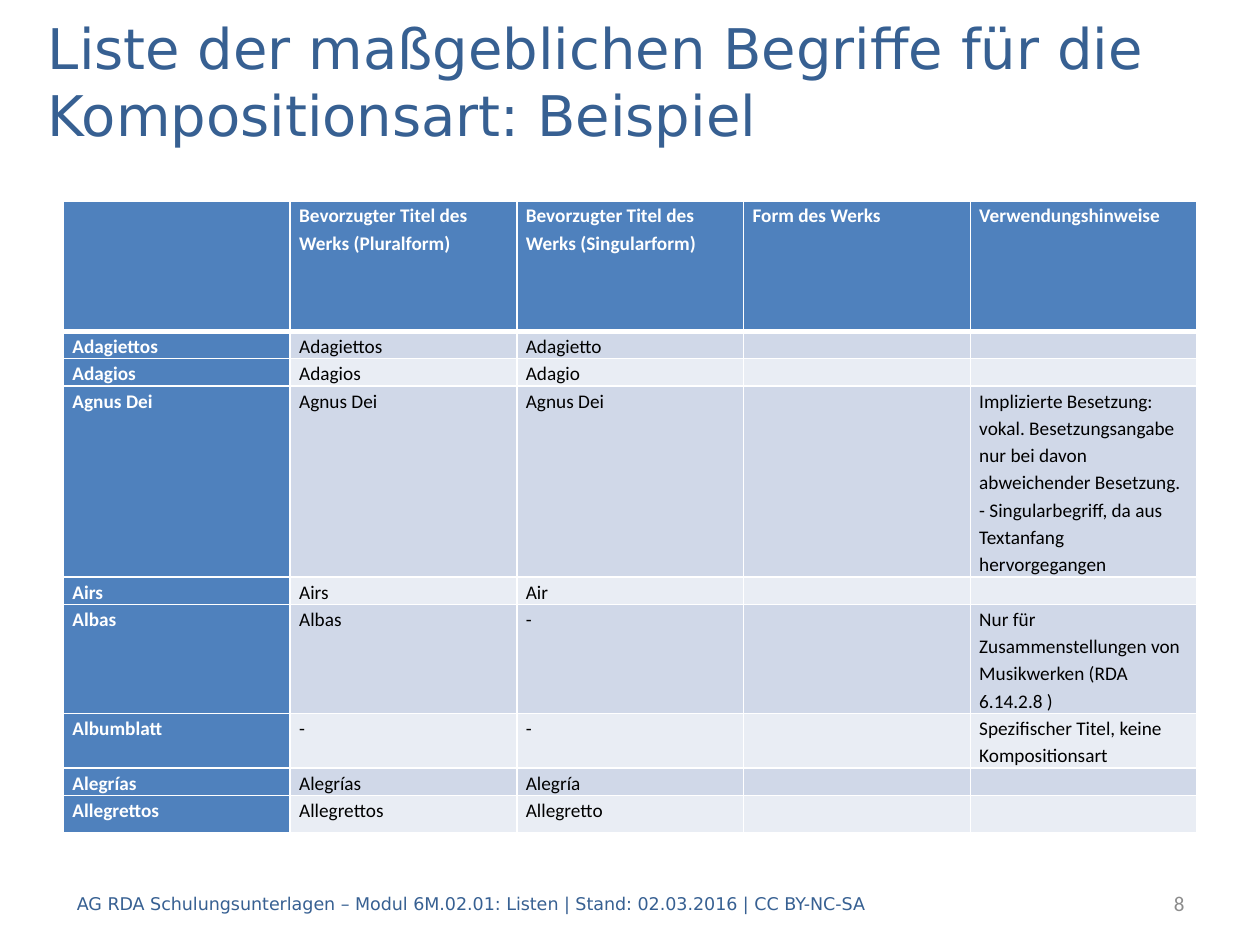
from typing import NamedTuple

from lxml import etree
from pptx import Presentation
from pptx.dml.color import RGBColor
from pptx.enum import text
from pptx.oxml.ns import qn
from pptx.util import Cm, Pt

COLORS = {
    "heading": "376092",
    "number": "8C8C8C",
    "accent": "4F81BD",
    "band_dark": "D0D8E8",
    "band_light": "E9EDF4",
    "white": "FFFFFF",
    "black": "000000",
}
COLUMN_WIDTH = 4.57
CELL_SIZE = 11
HEADERS = (
    "",
    "Bevorzugter Titel des Werks (Pluralform)",
    "Bevorzugter Titel des Werks (Singularform)",
    "Form des Werks",
    "Verwendungshinweise",
)


class Style(NamedTuple):
    size: float
    font: str
    color: str
    bold: bool = False


class Area(NamedTuple):
    """Position and size in centimetres."""
    left: float
    top: float
    width: float
    height: float


class Label(NamedTuple):
    content: str
    area: Area
    style: Style
    align: text.PP_ALIGN = text.PP_ALIGN.LEFT


class Term(NamedTuple):
    name: str
    plural: str
    singular: str
    note: str = ""
    height: float = 0.55


TITLE = Label(
    "Liste der maßgeblichen Begriffe für die Kompositionsart: Beispiel",
    Area(0.71, 0.91, 24, 1.42),
    Style(32, "DejaVu Sans", "heading"),
)
FOOTERS = (
    Label("8", Area(20.09, 17.7, 4.04, 1.02), Style(12, "Calibri", "number"),
          text.PP_ALIGN.RIGHT),
    Label("AG RDA Schulungsunterlagen – Modul 6M.02.01: Listen | "
          "Stand: 02.03.2016 | CC BY-NC-SA",
          Area(1.3, 17.7, 20.6, 1.02), Style(10, "DejaVu Sans", "heading")),
)
TERMS = (
    Term("Adagiettos", "Adagiettos", "Adagietto"),
    Term("Adagios", "Adagios", "Adagio"),
    Term("Agnus Dei", "Agnus Dei", "Agnus Dei",
         "Implizierte Besetzung: vokal. Besetzungsangabe nur bei davon "
         "abweichender Besetzung. - Singularbegriff, da aus Textanfang "
         "hervorgegangen", 3.84),
    Term("Airs", "Airs", "Air"),
    Term("Albas", "Albas", "-",
         "Nur für Zusammenstellungen von Musikwerken (RDA 6.14.2.8 )", 2.19),
    Term("Albumblatt", "-", "-",
         "Spezifischer Titel, keine Kompositionsart", 1.1),
    Term("Alegrías", "Alegrías", "Alegría"),
    Term("Allegrettos", "Allegrettos", "Allegretto", height=0.75),
)


def rgb(color: str) -> RGBColor:
    return RGBColor.from_string(COLORS[color])


def write(para, content: str, style: Style) -> None:
    span = para.add_run()
    span.text = content
    formats = {"size": Pt(style.size), "name": style.font, "bold": style.bold}
    for name, value in formats.items():
        setattr(span.font, name, value)
    span.font.color.rgb = rgb(style.color)


def fill_label(box, label: Label) -> None:
    for side, length in label.area._asdict().items():
        setattr(box, side, Cm(length))
    frame = box.text_frame
    formats = {
        "word_wrap": True,
        "auto_size": text.MSO_AUTO_SIZE.NONE,
        "vertical_anchor": text.MSO_ANCHOR.MIDDLE,
    }
    for name, value in formats.items():
        setattr(frame, name, value)
    para = frame.paragraphs[0]
    para.alignment = label.align
    write(para, label.content, label.style)


def add_border(cell, side: str, points: float) -> None:
    line = etree.SubElement(cell._tc.get_or_add_tcPr(), qn(f"a:ln{side}"),
                            w=str(Pt(points)))
    solid = etree.SubElement(line, qn("a:solidFill"))
    etree.SubElement(solid, qn("a:srgbClr"), val=COLORS["white"])


def fill_cell(cell, content: str, row: int, column: int) -> None:
    formats = {"margin_left": 0.18, "margin_right": 0.18,
               "margin_top": 0, "margin_bottom": 0}
    for name, length in formats.items():
        setattr(cell, name, Cm(length))

    thick_side = {0: "B", 1: "T"}.get(row)
    for side in "LRTB":
        add_border(cell, side, 3 if side == thick_side else 1)

    is_header = row == 0 or column == 0
    band = "band_dark" if row % 2 else "band_light"
    cell.fill.solid()
    cell.fill.fore_color.rgb = rgb("accent" if is_header else band)

    para = cell.text_frame.paragraphs[0]
    para.line_spacing = 1.15
    if content:
        color = "white" if is_header else "black"
        write(para, content, Style(CELL_SIZE, "Calibri", color, is_header))
    else:
        # Keeps empty cells from stretching their row
        etree.SubElement(para._p, qn("a:endParaRPr"), sz=str(CELL_SIZE * 100))


def add_terms(page) -> None:
    rows = [HEADERS] + [(term.name, term.plural, term.singular, "", term.note)
                        for term in TERMS]
    heights = [2.63] + [term.height for term in TERMS]
    count = len(HEADERS)
    grid = page.shapes.add_table(
        len(rows), count, Cm(1.28), Cm(4.05),
        Cm(COLUMN_WIDTH * count), Cm(sum(heights))).table
    for column in grid.columns:
        column.width = Cm(COLUMN_WIDTH)
    for row, (contents, height) in enumerate(zip(rows, heights)):
        grid.rows[row].height = Cm(height)
        for column, content in enumerate(contents):
            fill_cell(grid.cell(row, column), content, row, column)


def main() -> None:
    deck = Presentation()
    deck.slide_width, deck.slide_height = Cm(25.4), Cm(19.05)
    page = deck.slides.add_slide(deck.slide_layouts[5])
    fill_label(page.shapes.title, TITLE)
    add_terms(page)
    for label in FOOTERS:
        box = page.shapes.add_textbox(*(Cm(length) for length in label.area))
        fill_label(box, label)
    deck.save("out.pptx")


if __name__ == "__main__":
    main()
